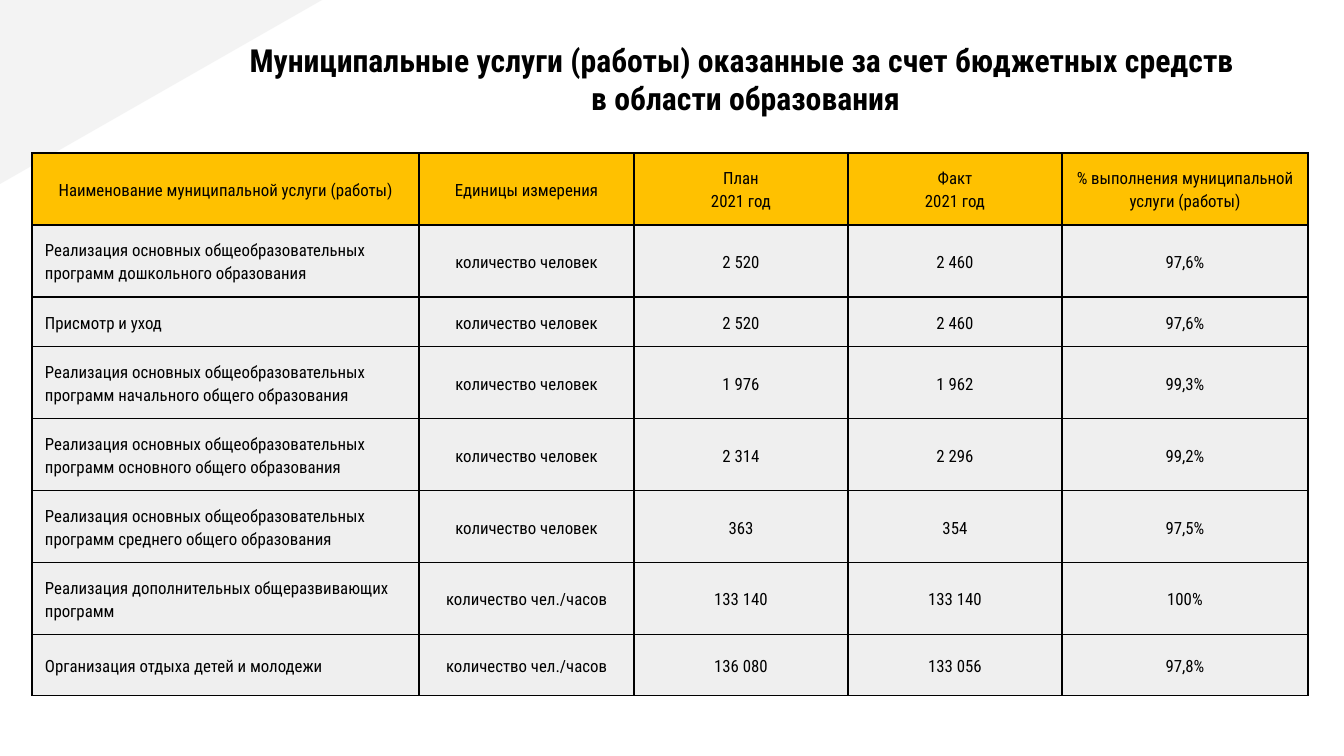
"""Builds a slide with a table of municipal education services: plan, fact and completion."""
import dataclasses

import lxml.etree
import pptx
import pptx.dml.color
import pptx.enum.shapes
import pptx.enum.text
import pptx.oxml.ns
import pptx.util

WIDTH, HEIGHT = 1344, 756
EMU_PER_PX = 9144000 / WIDTH
ALIGN = pptx.enum.text.PP_ALIGN
ANCHOR = pptx.enum.text.MSO_ANCHOR


@dataclasses.dataclass(frozen=True)
class Theme:
    font: str = "Roboto Condensed"
    ink: str = "000000"
    corner: str = "F3F3F3"
    header: str = "FFC100"
    body: str = "EFEFEF"
    title_size: int = 17
    table_size: int = 9
    border: float = 0.75
    line_spacing: float = 1.15
    inset: int = 13


THEME = Theme()
TITLE = "Муниципальные услуги (работы) оказанные за счет бюджетных средств\v в области образования"
BASIC = "Реализация основных общеобразовательных\nпрограмм {} образования"
PEOPLE = "количество человек"
HOURS = "количество чел./часов"
COLUMN_WIDTHS = [387, 215, 214, 214, 246]
ROW_HEIGHTS = [72, 72, 50, 72, 72, 72, 72, 61]
ROWS = [
    ["Наименование муниципальной услуги (работы)", "Единицы измерения",
     "План\n2021 год", "Факт\n2021 год", "% выполнения муниципальной услуги (работы)"],
    [BASIC.format("дошкольного"), PEOPLE, "2 520", "2 460", "97,6%"],
    ["Присмотр и уход", PEOPLE, "2 520", "2 460", "97,6%"],
    [BASIC.format("начального общего"), PEOPLE, "1 976", "1 962", "99,3%"],
    [BASIC.format("основного общего"), PEOPLE, "2 314", "2 296", "99,2%"],
    [BASIC.format("среднего общего"), PEOPLE, "363", "354", "97,5%"],
    ["Реализация дополнительных общеразвивающих программ", HOURS, "133 140", "133 140", "100%"],
    ["Организация отдыха детей и молодежи", HOURS, "136 080", "133 056", "97,8%"],
]


def px(length):
    """Turn pixels into EMU."""
    return pptx.util.Emu(round(length * EMU_PER_PX))


def rgb(value):
    """Turn a hex string into a colour."""
    return pptx.dml.color.RGBColor.from_string(value)


def style_paragraph(para, size, align, bold=False):
    """Set the alignment and font of a paragraph."""
    para.alignment = align
    para.font.name = THEME.font
    para.font.size = pptx.util.Pt(size)
    para.font.bold = bold
    para.font.color.rgb = rgb(THEME.ink)


def set_insets(target):
    """Give a cell or text frame the same inset on every side."""
    target.margin_left = target.margin_right = px(THEME.inset)
    target.margin_top = target.margin_bottom = px(THEME.inset)


def add_corner(page):
    """Add the pale triangle in the top left corner."""
    corner = page.shapes.add_shape(
        pptx.enum.shapes.MSO_SHAPE.RIGHT_TRIANGLE, 0, 0, px(322), px(184))
    corner.rotation = 180
    corner.element.spPr.xfrm.set("flipH", "1")
    corner.shadow.inherit = False
    corner.fill.solid()
    corner.fill.fore_color.rgb = rgb(THEME.corner)
    corner.line.fill.background()


def set_title(page):
    """Place and format the title placeholder."""
    title = page.shapes.title
    title.left, title.top, title.width, title.height = px(191), px(28), px(1102), px(97)
    frame = title.text_frame
    frame.text = TITLE
    frame.word_wrap = True
    frame.auto_size = pptx.enum.text.MSO_AUTO_SIZE.NONE
    frame.vertical_anchor = ANCHOR.TOP
    set_insets(frame)
    style_paragraph(frame.paragraphs[0], THEME.title_size, ALIGN.CENTER, bold=True)


def add_borders(cell):
    """Draw a thin line on each side of a cell."""
    qn = pptx.oxml.ns.qn
    properties = cell._tc.get_or_add_tcPr()
    for side in ("a:lnL", "a:lnR", "a:lnT", "a:lnB"):
        line = lxml.etree.SubElement(properties, qn(side), w=str(pptx.util.Pt(THEME.border)))
        fill = lxml.etree.SubElement(line, qn("a:solidFill"))
        lxml.etree.SubElement(fill, qn("a:srgbClr"), val=THEME.ink)


def fill_cell(cell, text, colour, align):
    """Write and format one table cell."""
    cell.text = text
    cell.vertical_anchor = ANCHOR.MIDDLE
    set_insets(cell)
    add_borders(cell)
    cell.fill.solid()
    cell.fill.fore_color.rgb = rgb(colour)
    for para in cell.text_frame.paragraphs:
        style_paragraph(para, THEME.table_size, align)
        para.line_spacing = THEME.line_spacing


def add_services_table(page):
    """Add the table of services."""
    table = page.shapes.add_table(
        len(ROWS), len(COLUMN_WIDTHS), px(32), px(153),
        px(sum(COLUMN_WIDTHS)), px(sum(ROW_HEIGHTS))).table
    table.horz_banding = False
    table.first_row = False
    for column, width in zip(table.columns, COLUMN_WIDTHS):
        column.width = px(width)
    for row, height in zip(table.rows, ROW_HEIGHTS):
        row.height = px(height)
    for row_index, texts in enumerate(ROWS):
        colour = THEME.body if row_index else THEME.header
        for column_index, text in enumerate(texts):
            is_name = row_index > 0 and column_index == 0
            align = ALIGN.LEFT if is_name else ALIGN.CENTER
            fill_cell(table.cell(row_index, column_index), text, colour, align)


def main():
    """Build and save the deck."""
    deck = pptx.Presentation()
    deck.slide_width, deck.slide_height = px(WIDTH), px(HEIGHT)
    page = deck.slides.add_slide(deck.slide_layouts.get_by_name("Title Only"))
    add_corner(page)
    set_title(page)
    add_services_table(page)
    deck.save("out.pptx")


if __name__ == "__main__":
    main()
